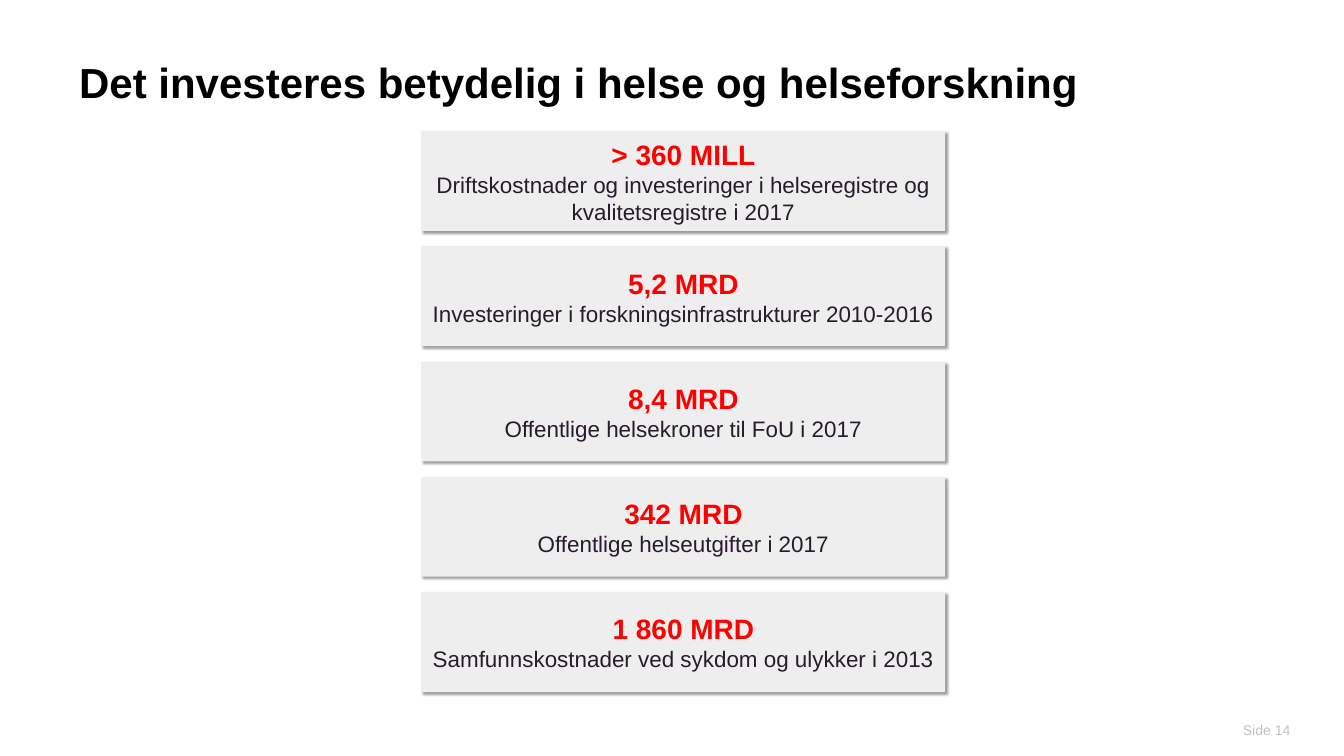
from dataclasses import dataclass

from pptx import Presentation
from pptx.dml.color import RGBColor
from pptx.enum.shapes import MSO_SHAPE
from pptx.enum.text import MSO_ANCHOR, PP_ALIGN
from pptx.oxml import parse_xml
from pptx.oxml.ns import nsdecls, qn
from pptx.util import Pt


@dataclass(frozen=True)
class Theme:
    font: str = "Arial"
    title: str = "000000"
    amount: str = "FF0000"
    label: str = "281C2C"
    page: str = "C1C1C1"
    card: str = "EEEEEE"
    shadow: str = "000000"
    title_size: int = 60
    amount_size: int = 40
    label_size: int = 32
    page_size: int = 20


def write(p, text, size, color, bold=False, align=PP_ALIGN.LEFT):
    p.text = text
    p.alignment = align
    p.font.name = theme.font
    p.font.size = Pt(size)
    p.font.bold = bold
    p.font.color.rgb = RGBColor.from_string(color)


def set_frame(tf, inset=0):
    tf.word_wrap = True
    tf.vertical_anchor = MSO_ANCHOR.MIDDLE
    tf.margin_left = tf.margin_right = Pt(inset)
    tf.margin_top = tf.margin_bottom = Pt(inset / 2)


theme = Theme()
prs = Presentation()
prs.slide_width, prs.slide_height = Pt(1919.52), Pt(1080)
s = prs.slides.add_slide(prs.slide_layouts[5])

title = s.shapes.title
title.left, title.top, title.width, title.height = Pt(113), Pt(55.5), Pt(1698.5), Pt(131.7)
set_frame(title.text_frame)
p = title.text_frame.paragraphs[0]
write(p, "Det investeres betydelig i helse og helseforskning",
      theme.title_size, theme.title, bold=True)
p.line_spacing = 0.9

cards = [
    ("> 360 MILL", "Driftskostnader og investeringer i helseregistre og kvalitetsregistre i 2017"),
    ("5,2 MRD", "Investeringer i forskningsinfrastrukturer 2010-2016"),
    ("8,4 MRD", "Offentlige helsekroner til FoU i 2017"),
    ("342 MRD", "Offentlige helseutgifter i 2017"),
    ("1 860 MRD", "Samfunnskostnader ved sykdom og ulykker i 2013"),
]
left, top, width, height, gap = 602, 187.2, 748, 142.6, 22.1

for i, (amount, label) in enumerate(cards):
    sp = s.shapes.add_shape(MSO_SHAPE.RECTANGLE, Pt(left), Pt(top + i * (height + gap)),
                            Pt(width), Pt(height))
    sp.fill.solid()
    sp.fill.fore_color.rgb = RGBColor.from_string(theme.card)
    sp.line.fill.background()
    sp.shadow.inherit = False
    sp.element.spPr.find(qn("a:effectLst")).append(parse_xml(
        f'<a:outerShdw {nsdecls("a")} blurRad="{Pt(4)}" dist="{Pt(3)}" dir="2700000" '
        f'algn="tl" rotWithShape="0"><a:srgbClr val="{theme.shadow}">'
        f'<a:alpha val="40000"/></a:srgbClr></a:outerShdw>'))
    tf = sp.text_frame
    set_frame(tf, 7.2)
    write(tf.paragraphs[0], amount, theme.amount_size, theme.amount,
          bold=True, align=PP_ALIGN.CENTER)
    write(tf.add_paragraph(), label, theme.label_size, theme.label, align=PP_ALIGN.CENTER)

page = s.shapes.add_textbox(Pt(1730), Pt(1029), Pt(113), Pt(28.8))
set_frame(page.text_frame)
write(page.text_frame.paragraphs[0], "Side 14", theme.page_size, theme.page, align=PP_ALIGN.RIGHT)

prs.save("out.pptx")
